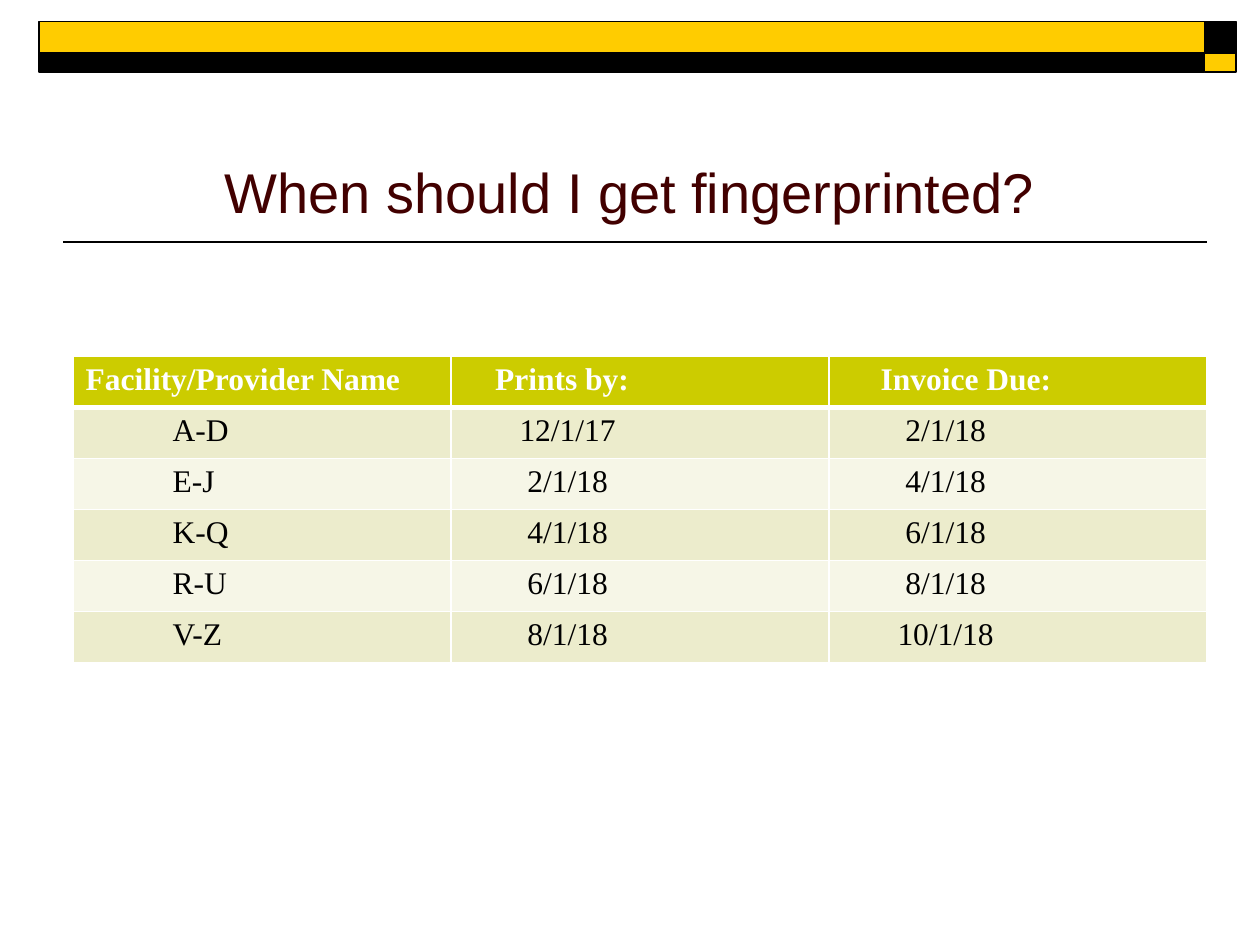
from pptx import Presentation
from pptx.dml.color import RGBColor
from pptx.enum.shapes import MSO_CONNECTOR, MSO_SHAPE
from pptx.enum.text import MSO_ANCHOR, PP_ALIGN
from pptx.oxml import parse_xml
from pptx.oxml.ns import nsdecls
from pptx.util import Inches, Pt

RECTANGLE, STRAIGHT = MSO_SHAPE.RECTANGLE, MSO_CONNECTOR.STRAIGHT
LEFT, CENTER = PP_ALIGN.LEFT, PP_ALIGN.CENTER
BOTTOM = MSO_ANCHOR.BOTTOM

BLACK, WHITE, GOLD, MAROON = "000000", "FFFFFF", "FFCC00", "420000"
HEADER_FILL, ROW_FILLS = "CCCC00", ("ECECCC", "F6F6E7")

BANNER_COLUMNS = ((0.31, 9.25), (9.56, 0.25))  # left, width
BANNER_ROWS = ((0.17, 0.25), (0.42, 0.15))     # top, height
BANNER_FILLS = ((GOLD, BLACK), (BLACK, GOLD))

SCHEDULE = (
    ("Facility/Provider Name", "Prints by:", "Invoice Due:"),
    ("A-D", "12/1/17", "2/1/18"),
    ("E-J", "2/1/18", "4/1/18"),
    ("K-Q", "4/1/18", "6/1/18"),
    ("R-U", "6/1/18", "8/1/18"),
    ("V-Z", "8/1/18", "10/1/18"),
)
HEADER_INDENTS = (0.1, 0.35, 0.41)
NAME_INDENT = 0.79
DATE_RIGHT_MARGIN = 1.25


def color(value):
    return RGBColor.from_string(value)


def format_text(paragraph, align, tint, **values):
    paragraph.alignment = align
    for name, value in values.items():
        setattr(paragraph.font, name, value)
    paragraph.font.color.rgb = color(tint)


def add_banner(page):
    for (top, height), fills in zip(BANNER_ROWS, BANNER_FILLS):
        for (left, width), fill in zip(BANNER_COLUMNS, fills):
            block = page.shapes.add_shape(
                RECTANGLE, *map(Inches, (left, top, width, height)))
            block.shadow.inherit = False
            block.fill.solid()
            block.fill.fore_color.rgb = color(fill)
            block.line.color.rgb = color(BLACK)
            block.line.width = Pt(1)


def add_rule(page):
    rule = page.shapes.add_connector(
        STRAIGHT, *map(Inches, (0.5, 1.92, 9.58, 1.92)))
    rule.line.color.rgb = color(BLACK)
    rule.line.width = Pt(1)
    rule._element.spPr.append(parse_xml(f"<a:effectLst {nsdecls('a')}/>"))


def set_title(page, text):
    title = page.shapes.title
    title.left, title.top, title.width, title.height = map(
        Inches, (0.5, 0.58, 9, 1.25))
    title.text_frame.vertical_anchor = BOTTOM
    title.text_frame.text = text
    format_text(title.text_frame.paragraphs[0], CENTER, MAROON,
                name="Arial", size=Pt(32))


def set_borders(cell, **widths):
    """Draw white borders; they must come before the fill in the cell."""
    properties = cell._tc.get_or_add_tcPr()
    for index, side in enumerate("LRTB"):
        width = Pt(widths.get(side, 1))
        properties.insert(index, parse_xml(
            f'<a:ln{side} {nsdecls("a")} w="{width}"><a:solidFill>'
            f'<a:srgbClr val="{WHITE}"/></a:solidFill></a:ln{side}>'))


def fill_cell(cell, text, row, column):
    is_header = row == 0
    is_date = not is_header and column > 0
    cell.text = text
    format_text(cell.text_frame.paragraphs[0], CENTER if is_date else LEFT,
                WHITE if is_header else BLACK,
                name="Times New Roman", size=Pt(18), bold=is_header)
    cell.fill.solid()
    cell.fill.fore_color.rgb = color(
        HEADER_FILL if is_header else ROW_FILLS[(row - 1) % 2])
    # Dates are centred in the left part of their column
    if is_date:
        cell.margin_right = Inches(DATE_RIGHT_MARGIN)
    else:
        cell.margin_left = Inches(
            HEADER_INDENTS[column] if is_header else NAME_INDENT)
    set_borders(cell, **({"B": 3} if is_header else {"T": 3} if row == 1 else {}))


def add_schedule(page):
    table = page.shapes.add_table(
        len(SCHEDULE), len(SCHEDULE[0]),
        *map(Inches, (0.58, 2.83, 9, 2.43))).table
    for row, texts in enumerate(SCHEDULE):
        for column, text in enumerate(texts):
            fill_cell(table.cell(row, column), text, row, column)


def main():
    deck = Presentation()
    deck.slide_width, deck.slide_height = Inches(10), Inches(7.5)
    page = deck.slides.add_slide(deck.slide_layouts[5])
    add_rule(page)
    add_banner(page)
    set_title(page, "When should I get fingerprinted?")
    add_schedule(page)
    deck.save("out.pptx")


if __name__ == "__main__":
    main()
